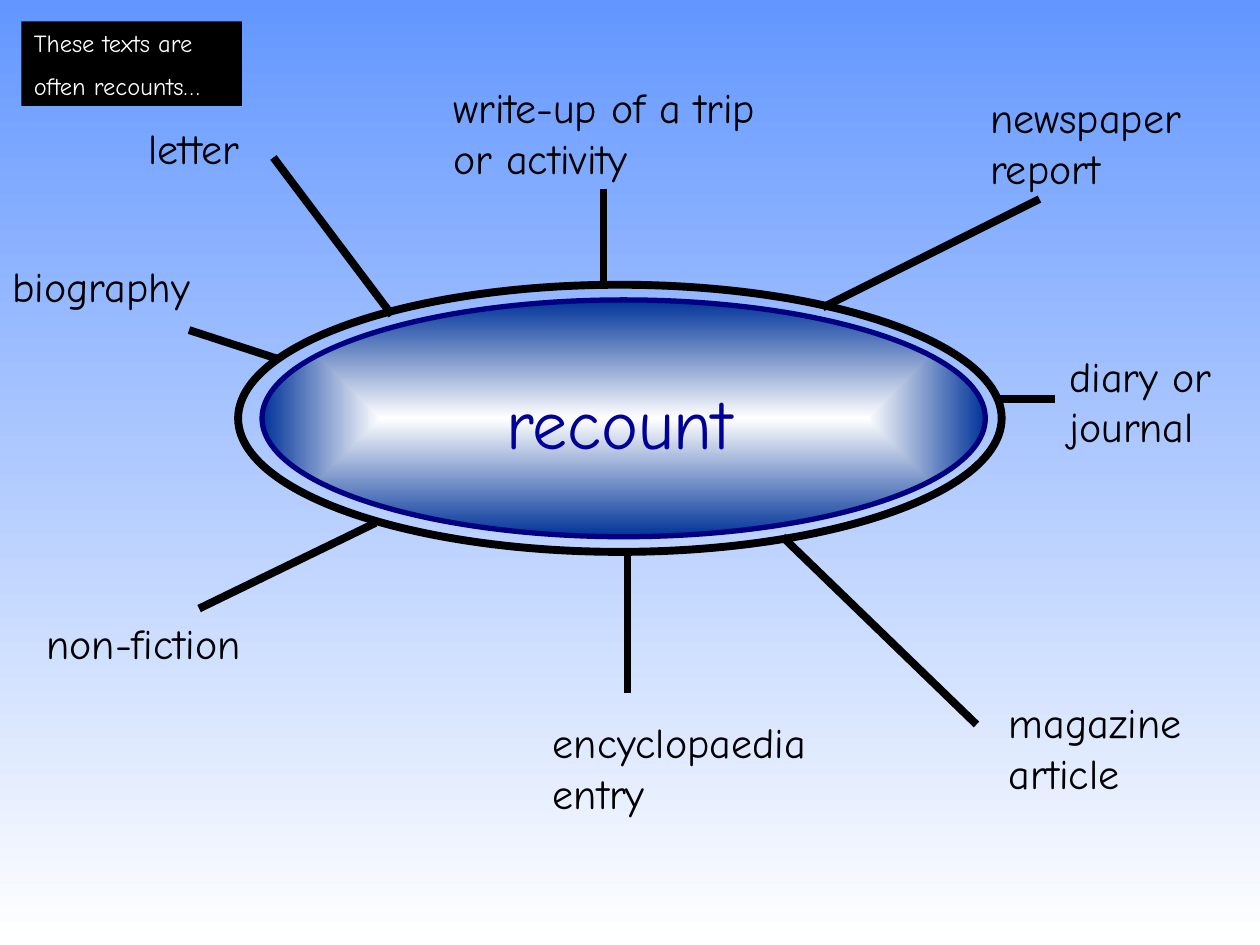
from lxml.etree import SubElement
from pptx import Presentation
from pptx.dml.color import RGBColor
from pptx.enum.shapes import MSO_CONNECTOR, MSO_SHAPE
from pptx.enum.text import MSO_AUTO_SIZE, PP_ALIGN
from pptx.oxml.ns import qn
from pptx.util import Inches, Pt

FONT = "Comic Neue"
BLACK = RGBColor(0x00, 0x00, 0x00)
WHITE = RGBColor(0xFF, 0xFF, 0xFF)
SKY = RGBColor(0x63, 0x97, 0xFF)
BLUE = RGBColor(0x00, 0x33, 0x99)
NAVY = RGBColor(0x00, 0x00, 0x80)
TITLE_BLUE = RGBColor(0x00, 0x00, 0x99)
THICK = 4.5

SPOKES = [
    (4.79, 2.26, 4.79, 1.5),
    (2.17, 1.25, 3.11, 2.5),
    (1.5, 2.62, 2.21, 2.85),
    (1.58, 4.83, 2.98, 4.15),
    (4.98, 5.5, 4.98, 4.38),
    (7.75, 5.75, 6.21, 4.26),
    (8.37, 3.17, 7.92, 3.17),
    (8.25, 1.58, 6.53, 2.44),
]
TEXT_TYPES = [
    ("letter", 1.08, 0.92, 1.65, 0.5),
    ("write-up of a trip or activity", 3.5, 0.6, 2.6, 0.9),
    ("newspaper report", 7.76, 0.68, 1.97, 0.9),
    ("diary or journal", 8.39, 2.73, 1.34, 1.3),
    ("magazine article", 7.91, 5.48, 1.73, 0.9),
    ("encyclopaedia entry", 4.29, 5.64, 2.44, 0.9),
    ("non-fiction", 0.27, 4.85, 1.97, 0.5),
    ("biography", 0, 2.02, 1.77, 0.5),
]


def set_gradient(fill, first, last):
    fill.gradient()
    for stop, color in zip(fill.gradient_stops, (first, last)):
        stop.color.rgb = color


def paint_background(page):
    fill = page.background.fill
    set_gradient(fill, SKY, WHITE)
    fill.gradient_angle = 270


def add_plain_shape(page, kind, *bounds):
    shape = page.shapes.add_shape(kind, *map(Inches, bounds))
    shape.shadow.inherit = False
    return shape


def add_ellipse(page, bounds, color, width):
    ellipse = add_plain_shape(page, MSO_SHAPE.OVAL, *bounds)
    ellipse.fill.background()
    ellipse.line.color.rgb = color
    ellipse.line.width = Pt(width)
    return ellipse


def glow_from_centre(shape):
    set_gradient(shape.fill, WHITE, BLUE)
    gradient = shape.element.spPr.find(qn("a:gradFill"))
    gradient.remove(gradient.find(qn("a:lin")))
    centre = SubElement(gradient, qn("a:path"), {"path": "shape"})
    sides = {side: "50000" for side in "ltrb"}
    SubElement(centre, qn("a:fillToRect"), sides)


def add_spoke(page, *ends):
    spoke = page.shapes.add_connector(MSO_CONNECTOR.STRAIGHT, *map(Inches, ends))
    spoke.line.color.rgb = BLACK
    spoke.line.width = Pt(THICK)
    SubElement(spoke.element.spPr, qn("a:effectLst"))


def add_text(page, lines, bounds, size, color, align=PP_ALIGN.LEFT):
    box = page.shapes.add_textbox(*map(Inches, bounds))
    frame = box.text_frame
    frame.word_wrap = True
    frame.auto_size = MSO_AUTO_SIZE.SHAPE_TO_FIT_TEXT
    for index, line in enumerate(lines):
        para = frame.add_paragraph() if index else frame.paragraphs[0]
        para.alignment = align
        para.space_before = Pt(size * 0.55) if index else Pt(0)
        span = para.add_run()
        span.text = line
        span.font.name = FONT
        span.font.size = Pt(size)
        span.font.color.rgb = color


def add_caption(page):
    panel = add_plain_shape(page, MSO_SHAPE.RECTANGLE, 0.17, 0.17, 1.75, 0.67)
    panel.fill.solid()
    panel.fill.fore_color.rgb = BLACK
    panel.line.fill.background()
    lines = ["These texts are", "often recounts…"]
    add_text(page, lines, (0.17, 0.17, 1.83, 0.68), 14, WHITE)


def main():
    deck = Presentation()
    deck.slide_width = Inches(10)
    deck.slide_height = Inches(7.5)
    page = deck.slides.add_slide(deck.slide_layouts.get_by_name("Blank"))
    paint_background(page)
    hub = add_ellipse(page, (2.08, 2.38, 5.74, 1.88), NAVY, 3)
    glow_from_centre(hub)
    add_ellipse(page, (1.89, 2.26, 6.06, 2.12), BLACK, THICK)
    for ends in SPOKES:
        add_spoke(page, *ends)
    add_text(page, ["recount"], (2.24, 2.96, 5.35, 0.77), 40, TITLE_BLUE, PP_ALIGN.CENTER)
    for label, *bounds in TEXT_TYPES:
        add_text(page, [label], bounds, 24, BLACK)
    add_caption(page)
    deck.save("out.pptx")


if __name__ == "__main__":
    main()
